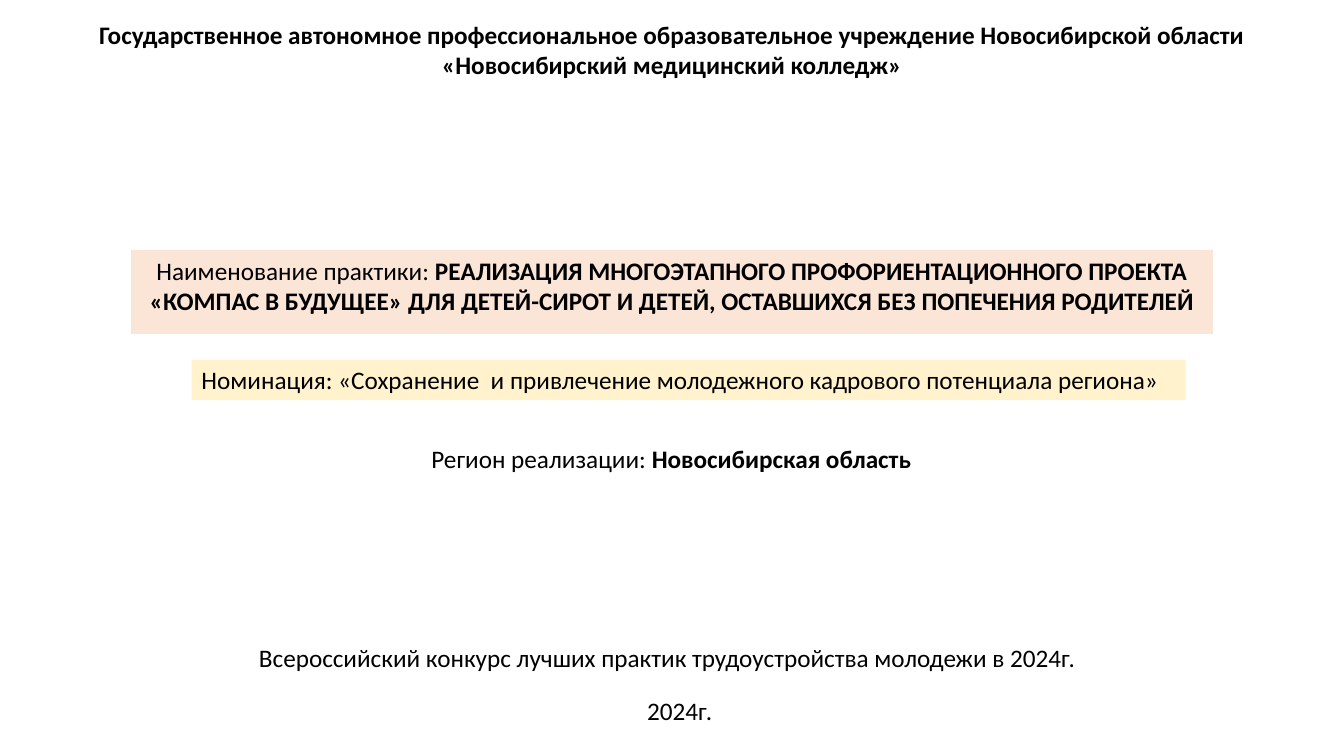
from dataclasses import dataclass

from pptx import Presentation
from pptx.dml.color import RGBColor
from pptx.enum import text
from pptx.util import Inches, Pt


@dataclass(frozen=True)
class Theme:
    font: str = "Calibri"
    size: int = 18
    ink: str = "000000"
    background: str = "FFFFFF"
    practice_fill: str = "FBE5D6"
    nomination_fill: str = "FFF2CC"


THEME = Theme()
LINE_HEIGHT = 0.4
TWO_LINE_HEIGHT = 0.71


def paint(fill, color):
    fill.solid()
    fill.fore_color.rgb = RGBColor.from_string(color)


def write(shape, paragraphs, alignment=text.PP_ALIGN.LEFT, wrap=False):
    frame = shape.text_frame
    frame.word_wrap = wrap
    frame.auto_size = text.MSO_AUTO_SIZE.SHAPE_TO_FIT_TEXT
    frame.vertical_anchor = text.MSO_ANCHOR.TOP
    for index, pieces in enumerate(paragraphs):
        paragraph = frame.add_paragraph() if index else frame.paragraphs[0]
        paragraph.alignment = alignment
        for words, bold in pieces:
            run = paragraph.add_run()
            run.text = words
            run.font.name = THEME.font
            run.font.size = Pt(THEME.size)
            run.font.bold = bold
            run.font.color.rgb = RGBColor.from_string(THEME.ink)


def add_institution(slide, left, top, width):
    heading = slide.shapes.add_textbox(
        Inches(left), Inches(top), Inches(width), Inches(TWO_LINE_HEIGHT))
    name = ("Государственное автономное профессиональное образовательное учреждение "
            "Новосибирской области «Новосибирский медицинский колледж»")
    write(heading, [[(name, True)]], text.PP_ALIGN.CENTER, wrap=True)


def add_practice_title(slide, left, top, width):
    title = slide.shapes.title
    title.left, title.top = Inches(left), Inches(top)
    title.width, title.height = Inches(width), Inches(TWO_LINE_HEIGHT)
    paint(title.fill, THEME.practice_fill)
    write(title, [
        [("Наименование практики:", False),
         (" РЕАЛИЗАЦИЯ МНОГОЭТАПНОГО ПРОФОРИЕНТАЦИОННОГО ПРОЕКТА", True)],
        [("«КОМПАС В БУДУЩЕЕ» ДЛЯ ДЕТЕЙ-СИРОТ И ДЕТЕЙ, "
          "ОСТАВШИХСЯ БЕЗ ПОПЕЧЕНИЯ РОДИТЕЛЕЙ", True)],
    ], text.PP_ALIGN.CENTER)


def add_line(slide, left, top, width, pieces, fill=None):
    line = slide.shapes.add_textbox(
        Inches(left), Inches(top), Inches(width), Inches(LINE_HEIGHT))
    if fill:
        paint(line.fill, fill)
    write(line, [pieces])


def add_cover(presentation):
    slide = presentation.slides.add_slide(presentation.slide_layouts[5])
    paint(slide.background.fill, THEME.background)
    add_institution(slide, 0.25, 0.14, 12.83)
    add_practice_title(slide, 1.3, 2.48, 10.73)
    add_line(slide, 1.9, 3.57, 9.86, [
        ("Номинация: «Сохранение  и привлечение молодежного "
         "кадрового потенциала региона»", False)], THEME.nomination_fill)
    add_line(slide, 4.18, 4.35, 4.96, [
        ("Регион реализации: ", False), ("Новосибирская область", True)])
    add_line(slide, 2.47, 6.32, 8.39, [
        ("Всероссийский конкурс лучших практик трудоустройства молодежи в 2024г.", False)])
    add_line(slide, 6.32, 6.85, 0.85, [("2024г.", False)])


def main():
    presentation = Presentation()
    presentation.slide_width = Inches(13.33)
    presentation.slide_height = Inches(7.5)
    add_cover(presentation)
    presentation.save("out.pptx")


if __name__ == "__main__":
    main()
